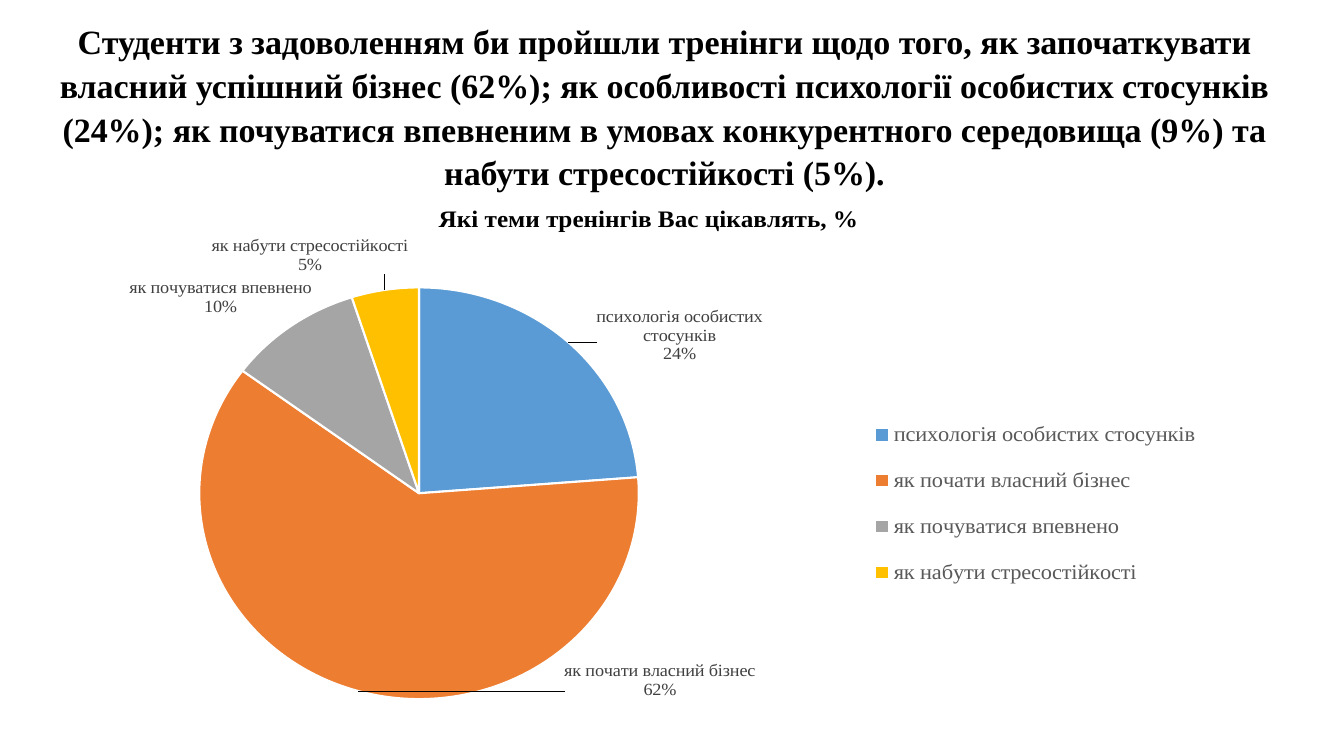
from dataclasses import dataclass
from typing import Any

from lxml.etree import SubElement
from pptx import Presentation
from pptx.chart.data import CategoryChartData
from pptx.dml.color import RGBColor
from pptx.enum.chart import XL_CHART_TYPE, XL_LABEL_POSITION, XL_LEGEND_POSITION
from pptx.enum.text import MSO_ANCHOR, MSO_AUTO_SIZE, PP_ALIGN
from pptx.oxml.ns import qn
from pptx.util import Pt

FONT = "Times New Roman"
COLORS = {
    "black": "000000", "white": "FFFFFF", "label": "404040", "legend": "595959",
    "blue": "5B9BD5", "orange": "ED7D31", "gray": "A5A5A5", "gold": "FFC000",
}
HEADLINE = (
    "Студенти з задоволенням би пройшли тренінги щодо того, як започаткувати "
    "власний успішний бізнес (62%); як особливості психології особистих стосунків "
    "(24%); як почуватися впевненим в умовах конкурентного середовища (9%) та "
    "набути стресостійкості (5%)."
)


@dataclass
class Topic:
    name: str
    share: int
    color: str
    label_shift: tuple[float, float]  # fractions of the chart's size


TOPICS = [
    Topic("психологія особистих стосунків", 24, "blue", (0.02, 0.05)),
    Topic("як почати власний бізнес", 62, "orange", (0.33, -0.05)),
    Topic("як почуватися впевнено", 10, "gray", (0.02, -0.01)),
    Topic("як набути стресостійкості", 5, "gold", (0.02, -0.02)),
]


def rgb(name: str) -> RGBColor:
    return RGBColor.from_string(COLORS[name])


def format_font(font: Any, size: float, color: str, bold: bool = False) -> None:
    font.name, font.size, font.bold = FONT, Pt(size), bold
    font.color.rgb = rgb(color)


def write_text(frame: Any, text: str, *, size: float, color: str = "black",
               bold: bool = False, spacing: float = 1.0) -> None:
    frame.text = text
    paragraph = frame.paragraphs[0]
    paragraph.alignment = PP_ALIGN.CENTER
    paragraph.line_spacing = spacing
    format_font(paragraph.runs[0].font, size, color, bold)


def set_layout(layout: Any, **values: Any) -> None:
    """Fill a c:layout element with a manual layout."""
    for child in list(layout):
        layout.remove(child)
    manual = SubElement(layout, qn("c:manualLayout"))
    for tag, value in values.items():
        SubElement(manual, qn(f"c:{tag}")).set("val", str(value))


def child_layout(parent: Any, index: int) -> Any:
    """Return the c:layout of a chart part, adding it at index if missing."""
    layout = parent.find(qn("c:layout"))
    if layout is None:
        layout = SubElement(parent, qn("c:layout"))
        parent.insert(index, layout)
    return layout


def add_topics_chart(slide: Any) -> None:
    data = CategoryChartData(number_format='0"%"')
    data.categories = [topic.name for topic in TOPICS]
    data.add_series("Series 1", [topic.share for topic in TOPICS])
    chart = slide.shapes.add_chart(
        XL_CHART_TYPE.PIE, Pt(31.7), Pt(131.8), Pt(863.3), Pt(392.4), data).chart
    chart.font.name, chart.font.size = "Calibri", Pt(10)

    # Chart title
    chart.has_title = True
    write_text(chart.chart_title.text_frame, "Які теми тренінгів Вас цікавлять, %",
               size=18, bold=True)

    # Legend
    chart.has_legend = True
    legend = chart.legend
    legend.position, legend.include_in_layout = XL_LEGEND_POSITION.RIGHT, False
    format_font(legend.font, 16, "legend")
    set_layout(child_layout(legend._element, 1), xMode="edge", yMode="edge",
               x=0.67, y=0.42, w=0.3, h=0.4)

    # Pie area
    plot = chart.plots[0]
    plot.vary_by_categories = True
    set_layout(child_layout(chart._chartSpace.chart.plotArea, 0), layoutTarget="inner",
               xMode="edge", yMode="edge", x=0.07, y=0.2, w=0.48, h=0.8)

    # Labels: category above share
    plot.has_data_labels = True
    labels = plot.series[0].data_labels
    labels.show_category_name = labels.show_value = True
    labels.number_format, labels.number_format_is_linked = '0"%"', False
    labels.position = XL_LABEL_POSITION.OUTSIDE_END
    format_font(labels.font, 13, "label")
    labels_xml = labels._element
    leader = labels_xml.find(qn("c:showLeaderLines"))
    if leader is None:
        leader = SubElement(labels_xml, qn("c:showLeaderLines"))
    leader.set("val", "1")
    separator = SubElement(labels_xml, qn("c:separator"))
    separator.text = "\n"
    leader.addprevious(separator)

    # Slices and label shifts
    for index, topic in enumerate(TOPICS):
        point = plot.series[0].points[index]
        point.format.fill.solid()
        point.format.fill.fore_color.rgb = rgb(topic.color)
        point.format.line.color.rgb = rgb("white")
        point.format.line.width = Pt(1.5)
        label = point.data_label
        format_font(label.font, 13, "label")
        label.position = XL_LABEL_POSITION.OUTSIDE_END
        label_xml = labels_xml.findall(qn("c:dLbl"))[index]
        set_layout(child_layout(label_xml, 1), x=topic.label_shift[0], y=topic.label_shift[1])
        for tag in ("c:showCatName", "c:showVal"):
            label_xml.find(qn(tag)).set("val", "1")
        label_separator = SubElement(label_xml, qn("c:separator"))
        label_separator.text = "\n"


def main() -> None:
    presentation = Presentation()
    presentation.slide_width, presentation.slide_height = Pt(960), Pt(540)
    slide = presentation.slides.add_slide(presentation.slide_layouts[5])

    # Headline
    title = slide.shapes.title
    title.left, title.top, title.width, title.height = Pt(15), Pt(23), Pt(919.5), Pt(104.4)
    frame = title.text_frame
    frame.word_wrap, frame.auto_size = True, MSO_AUTO_SIZE.NONE
    frame.vertical_anchor = MSO_ANCHOR.MIDDLE
    write_text(frame, HEADLINE, size=24.3, bold=True, spacing=1.07)

    add_topics_chart(slide)
    presentation.save("out.pptx")


if __name__ == "__main__":
    main()
